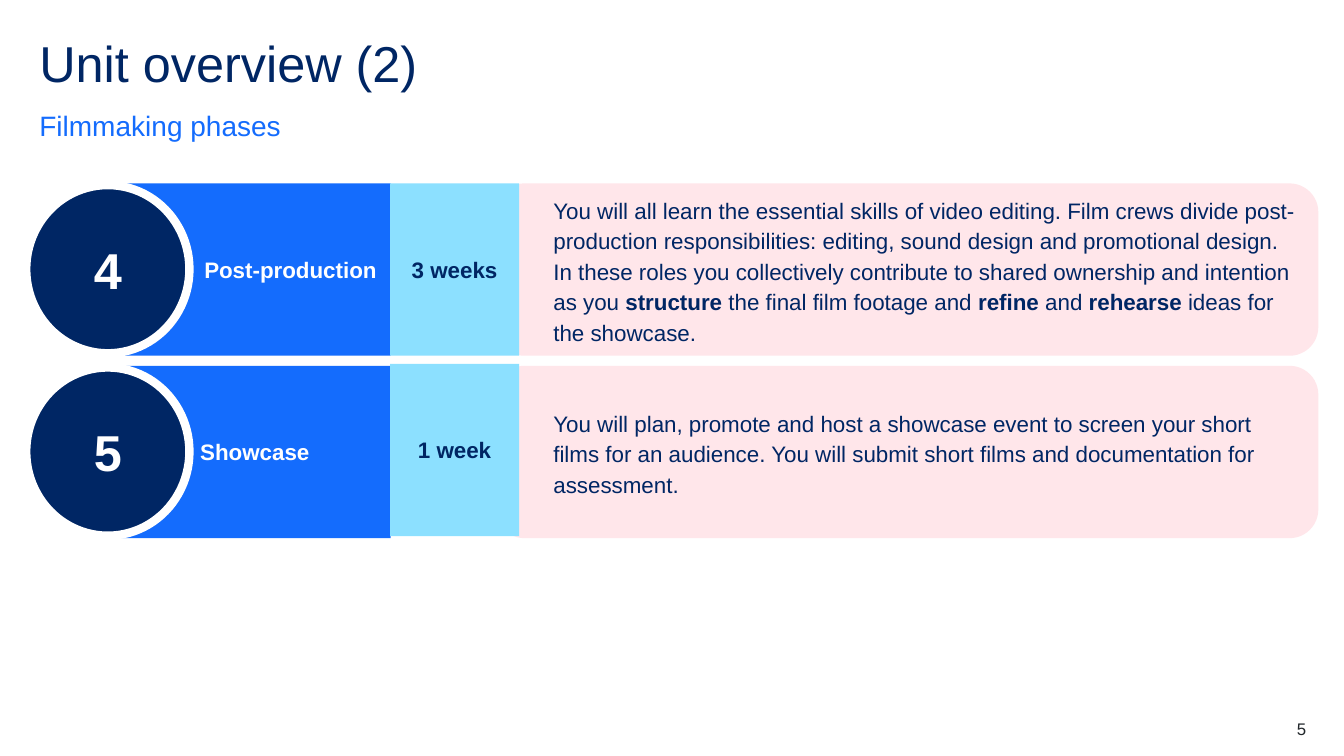
from lxml import etree
from pptx import Presentation
from pptx.dml.color import RGBColor
from pptx.enum.shapes import MSO_SHAPE
from pptx.enum.text import MSO_ANCHOR, MSO_AUTO_SIZE, PP_ALIGN
from pptx.oxml.ns import qn
from pptx.util import Pt

NAVY = RGBColor(0x00, 0x26, 0x64)
BLUE = RGBColor(0x14, 0x6C, 0xFD)
SKY = RGBColor(0x8C, 0xE0, 0xFF)
PINK = RGBColor(0xFF, 0xE6, 0xEA)
WHITE = RGBColor(0xFF, 0xFF, 0xFF)
GREY = RGBColor(0x22, 0x27, 0x2B)

RECT, ROUND, OVAL = MSO_SHAPE.RECTANGLE, MSO_SHAPE.ROUNDED_RECTANGLE, MSO_SHAPE.OVAL
LEFT, CENTER, RIGHT = PP_ALIGN.LEFT, PP_ALIGN.CENTER, PP_ALIGN.RIGHT
TOP, MIDDLE, BOTTOM = MSO_ANCHOR.TOP, MSO_ANCHOR.MIDDLE, MSO_ANCHOR.BOTTOM

FONT = "Arial"
ROW_TOP, ROW_PITCH, ROW_HEIGHT = 131, 130.3, 123.1

PHASES = [
    ("4", "Post-production", CENTER, "3 weeks", 0, [
        ("You will all learn the essential skills of video editing. Film crews divide "
         "post-production responsibilities: editing, sound design and promotional design. "
         "In these roles you collectively contribute to shared ownership and intention "
         "as you ", False),
        ("structure ", True),
        ("the final film footage and ", False),
        ("refine ", True),
        ("and ", False),
        ("rehearse", True),
        (" ideas for the showcase.", False)]),
    ("5", "Showcase", LEFT, "1 week", -1.4, [
        ("You will plan, promote and host a showcase event to screen your short films "
         "for an audience. You will submit short films and documentation for "
         "assessment.", False)]),
]


def write(tf, text, size=16, color=NAVY, bold=False, align=LEFT, anchor=MIDDLE,
          indent=0, spacing=1, after=0, inset=None):
    tf.word_wrap = True
    tf.auto_size = MSO_AUTO_SIZE.NONE
    tf.vertical_anchor = anchor
    if inset is not None:
        tf.margin_left = tf.margin_right = tf.margin_top = tf.margin_bottom = Pt(inset)
    p = tf.paragraphs[0]
    p.alignment = align
    p.line_spacing = spacing
    p.space_before = Pt(0)
    p.space_after = Pt(after)
    pPr = p._p.get_or_add_pPr()
    pPr.set("marL", str(Pt(indent)))
    pPr.set("indent", "0")
    etree.SubElement(pPr, qn("a:buNone"))
    for words, strong in [(text, bold)] if isinstance(text, str) else text:
        r = p.add_run()
        r.text = words
        r.font.name = FONT
        r.font.size = Pt(size)
        r.font.bold = strong
        r.font.color.rgb = color


class Deck:
    def __init__(self, width, height):
        self.prs = Presentation()
        self.prs.slide_width, self.prs.slide_height = Pt(width), Pt(height)
        self.s = self.prs.slides.add_slide(self.prs.slide_layouts[1])

    def placeholder(self, idx, box, text, **style):
        sp = self.s.placeholders[idx]
        sp.left, sp.top, sp.width, sp.height = map(Pt, box)
        write(sp.text_frame, text, inset=0, **style)

    def textbox(self, box, text, **style):
        sp = self.s.shapes.add_textbox(*map(Pt, box))
        write(sp.text_frame, text, inset=0, **style)

    def shape(self, group, kind, box, fill, text, outline=None, **style):
        sp = group.shapes.add_shape(kind, *map(Pt, box))
        sp.shadow.inherit = False
        sp.fill.solid()
        sp.fill.fore_color.rgb = fill
        if outline is None:
            sp.line.fill.background()
        else:
            sp.line.color.rgb = outline
            sp.line.width = Pt(6)
        write(sp.text_frame, text, **style)

    def phase(self, top, number, name, name_align, duration, shift, details):
        group = self.s.shapes.add_group_shape()
        self.shape(group, ROUND, (354.2, top, 587.5, ROW_HEIGHT), PINK, details,
                   indent=28, spacing=1.14, after=6)
        self.shape(group, RECT, (79.9, top, 199.2, ROW_HEIGHT), BLUE, name,
                   color=WHITE, bold=True, align=name_align, indent=56)
        self.shape(group, OVAL, (18.7, top + 1.2, 116.6, 120.2), NAVY, number,
                   outline=WHITE, size=36, color=WHITE, bold=True, align=CENTER)
        self.shape(group, RECT, (278.6, top + shift, 92.2, ROW_HEIGHT), SKY, duration,
                   bold=True, align=CENTER)


def main():
    deck = Deck(960, 540)
    deck.placeholder(0, (28.1, 28.1, 904.3, 43.2), "Unit overview (2)",
                     size=36, anchor=TOP, spacing=0.9)
    deck.placeholder(1, (28.1, 77, 904.3, 24.5), "Filmmaking phases",
                     size=20, color=BLUE, anchor=BOTTOM, spacing=1.5, after=12)
    for i, phase in enumerate(PHASES):
        deck.phase(ROW_TOP + i * ROW_PITCH, *phase)
    deck.textbox((876.2, 513.4, 56.9, 14.4), "5",
                 size=12, color=GREY, align=RIGHT, anchor=TOP)
    deck.prs.save("out.pptx")


if __name__ == "__main__":
    main()
